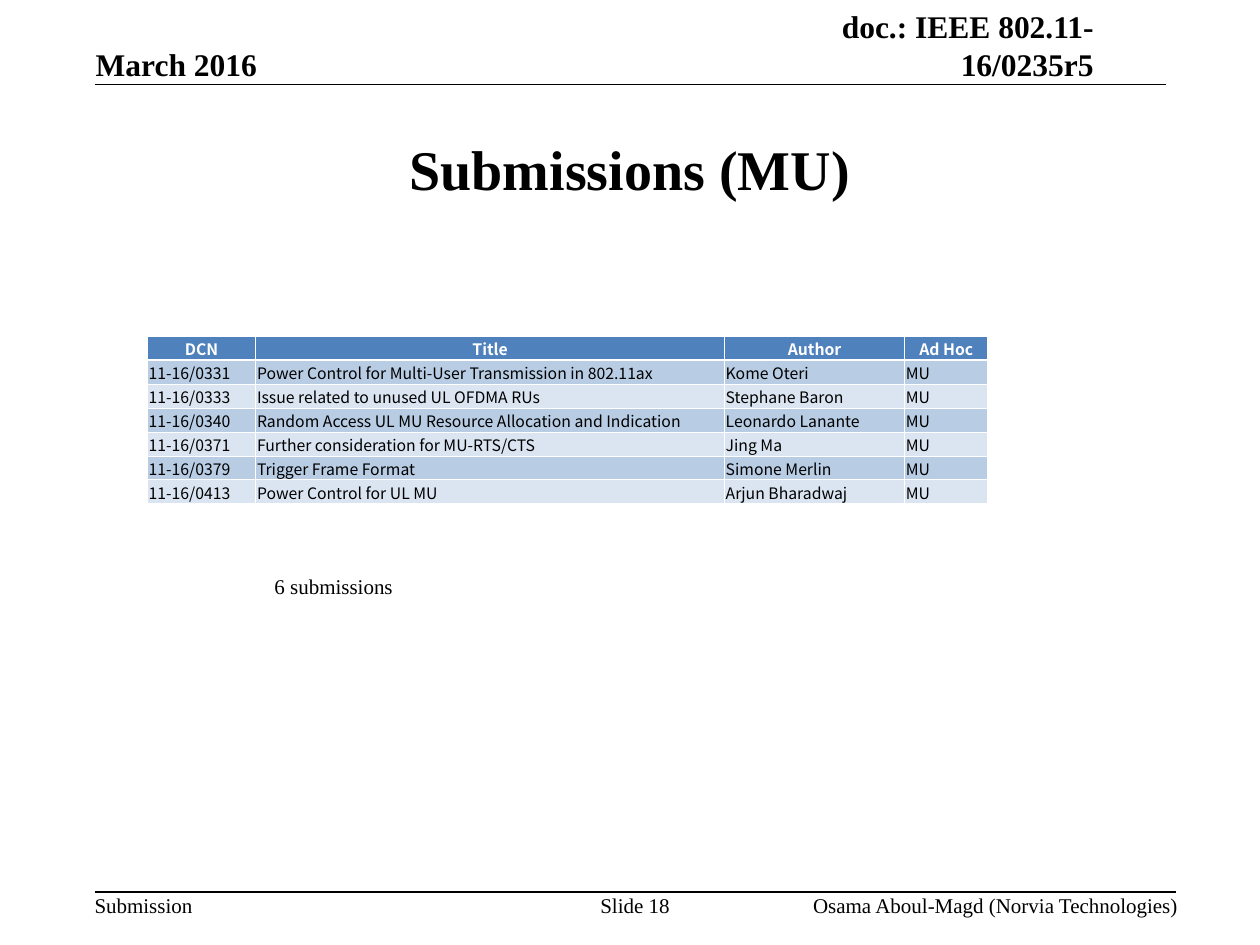
import pptx
import pptx.util
import pptx.dml.color
import pptx.enum.shapes
import pptx.enum.text
import pptx.oxml
import pptx.oxml.ns
from pptx.util import Inches

BLACK = pptx.dml.color.RGBColor(0x00, 0x00, 0x00)
WHITE = pptx.dml.color.RGBColor(0xFF, 0xFF, 0xFF)
HEADER_BLUE = pptx.dml.color.RGBColor(0x4F, 0x81, 0xBD)
BAND_DARK = pptx.dml.color.RGBColor(0xB8, 0xCC, 0xE4)
BAND_LIGHT = pptx.dml.color.RGBColor(0xDB, 0xE5, 0xF1)

SERIF = "Times New Roman"
SANS = "Noto Sans CJK SC"
LEFT = pptx.enum.text.PP_ALIGN.LEFT
CENTER = pptx.enum.text.PP_ALIGN.CENTER
RIGHT = pptx.enum.text.PP_ALIGN.RIGHT
TOP = pptx.enum.text.MSO_ANCHOR.TOP
MIDDLE = pptx.enum.text.MSO_ANCHOR.MIDDLE
BOTTOM = pptx.enum.text.MSO_ANCHOR.BOTTOM

COLUMN_WIDTHS = [0.86, 3.72, 1.43, 0.66]
ROW_HEIGHT = 0.19
SUBMISSIONS = [
    ("DCN", "Title", "Author", "Ad Hoc"),
    ("11-16/0331", "Power Control for Multi-User Transmission in 802.11ax", "Kome Oteri", "MU"),
    ("11-16/0333", "Issue related to unused UL OFDMA RUs", "Stephane Baron", "MU"),
    ("11-16/0340", "Random Access UL MU Resource Allocation and Indication", "Leonardo Lanante", "MU"),
    ("11-16/0371", "Further consideration for MU-RTS/CTS", "Jing Ma", "MU"),
    ("11-16/0379", "Trigger Frame Format", "Simone Merlin", "MU"),
    ("11-16/0413", "Power Control for UL MU", "Arjun Bharadwaj", "MU"),
]


def format_paragraph(p, size, bold=False, align=LEFT, color=BLACK, name=SERIF):
    p.alignment = align
    p.font.size = pptx.util.Pt(size)
    p.font.bold = bold
    p.font.name = name
    p.font.color.rgb = color


def set_margins(target, left, top, right, bottom):
    target.margin_left, target.margin_top = Inches(left), Inches(top)
    target.margin_right, target.margin_bottom = Inches(right), Inches(bottom)


def place(sp, left, top, width, height):
    sp.left, sp.top = Inches(left), Inches(top)
    sp.width, sp.height = Inches(width), Inches(height)


def add_title(slide, text):
    sp = slide.shapes.title
    place(sp, 0.75, 0.75, 8.5, 1.17)
    tf = sp.text_frame
    tf.text = text
    tf.vertical_anchor = MIDDLE
    format_paragraph(tf.paragraphs[0], 32, bold=True, align=CENTER)


def add_text(slide, text, box, size=12, bold=False, align=LEFT, anchor=TOP,
             margins=(0, 0, 0, 0), wrap=False):
    sp = slide.shapes.add_textbox(*map(Inches, box))
    tf = sp.text_frame
    tf.text = text
    tf.word_wrap = wrap
    tf.vertical_anchor = anchor
    set_margins(tf, *margins)
    format_paragraph(tf.paragraphs[0], size, bold, align)


def add_rule(slide, left, right, y):
    line = slide.shapes.add_connector(
        pptx.enum.shapes.MSO_CONNECTOR.STRAIGHT,
        Inches(left), Inches(y), Inches(right), Inches(y))
    line.line.color.rgb = BLACK
    line.line.width = pptx.util.Pt(1)
    line._element.spPr.append(pptx.oxml.parse_xml(
        f"<a:effectLst {pptx.oxml.ns.nsdecls('a')}/>"))


def set_borders(cell, top, bottom):
    """Draw white cell borders; the side ones are 0.5 pt wide."""
    tcPr = cell._tc.get_or_add_tcPr()
    for side, width in (("L", 0.5), ("R", 0.5), ("T", top), ("B", bottom)):
        tcPr.append(pptx.oxml.parse_xml(
            f"<a:ln{side} {pptx.oxml.ns.nsdecls('a')} w='{pptx.util.Pt(width)}'>"
            f"<a:solidFill><a:srgbClr val='{WHITE}'/></a:solidFill></a:ln{side}>"))


def format_cell(cell, text, row):
    header = row == 0
    cell.text = text
    set_margins(cell, 0.01, 0.01, 0.01, 0)
    cell.vertical_anchor = BOTTOM
    format_paragraph(cell.text_frame.paragraphs[0], 9, bold=header,
                     align=CENTER if header else LEFT,
                     color=WHITE if header else BLACK, name=SANS)
    set_borders(cell, top=1.5 if row == 1 else 0.5, bottom=1.5 if header else 0.5)
    cell.fill.solid()
    band = BAND_DARK if row % 2 else BAND_LIGHT
    cell.fill.fore_color.rgb = HEADER_BLUE if header else band


def add_submission_table(slide, left, top):
    table = slide.shapes.add_table(
        len(SUBMISSIONS), len(COLUMN_WIDTHS), Inches(left), Inches(top),
        Inches(sum(COLUMN_WIDTHS)), Inches(ROW_HEIGHT * len(SUBMISSIONS))).table
    for column, width in zip(table.columns, COLUMN_WIDTHS):
        column.width = Inches(width)
    for i, values in enumerate(SUBMISSIONS):
        table.rows[i].height = Inches(ROW_HEIGHT)
        for j, text in enumerate(values):
            format_cell(table.cell(i, j), text, i)


def main():
    prs = pptx.Presentation()
    prs.slide_width, prs.slide_height = Inches(10), Inches(7.5)
    slide = prs.slides.add_slide(prs.slide_layouts[5])

    add_text(slide, "doc.: IEEE 802.11-16/0235r5", (5.59, 0.36, 3.09, 0.3), size=18,
             bold=True, align=RIGHT, anchor=BOTTOM, margins=(0.5, 0, 0, 0), wrap=True)
    add_rule(slide, 0.75, 9.25, 0.67)
    add_text(slide, "Submission", (0.75, 7.08, 0.78, 0.2))
    add_rule(slide, 0.75, 9.33, 7.08)
    add_title(slide, "Submissions (MU)")
    add_text(slide, "March 2016", (0.76, 0.36, 1.29, 0.3), size=18, bold=True, anchor=BOTTOM)
    add_text(slide, "Osama Aboul-Magd (Norvia Technologies)", (5.55, 7.08, 3.8, 0.2), align=RIGHT)
    add_text(slide, "Slide 18", (4.75, 7.08, 0.58, 0.2), align=CENTER)
    add_submission_table(slide, 1.17, 2.67)
    add_text(slide, "6 submissions", (2.08, 4.5, 1.15, 0.3), margins=(0.1, 0.05, 0.1, 0.05))

    prs.save("out.pptx")


if __name__ == "__main__":
    main()
